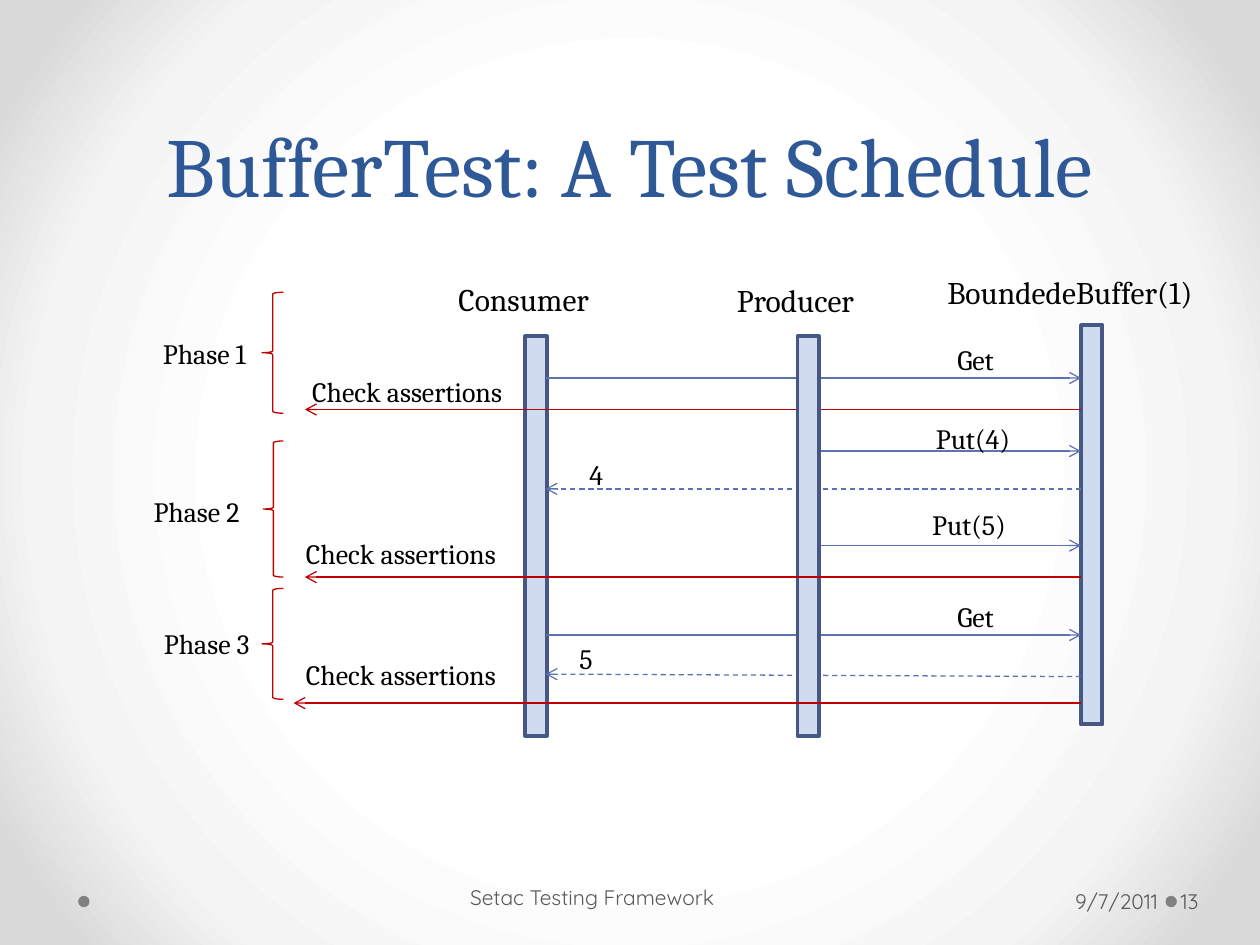
from dataclasses import dataclass

from lxml.etree import SubElement
from pptx import Presentation
from pptx.dml.color import RGBColor
from pptx.enum.dml import MSO_LINE_DASH_STYLE as Dash
from pptx.enum.shapes import MSO_CONNECTOR as Connector, MSO_SHAPE as Shape
from pptx.enum.text import MSO_ANCHOR as Anchor, MSO_AUTO_SIZE as AutoSize, PP_ALIGN as Align
from pptx.oxml.ns import qn
from pptx.util import Inches, Pt


@dataclass(frozen=True)
class Theme:
    """Colours, fonts and sizes of the slide."""
    title: str = "2F5897"
    text: str = "000000"
    footer: str = "595959"
    dot: str = "808080"
    bar_fill: str = "CFDCF0"
    bar_line: str = "475785"
    message: str = "5C72B2"
    check: str = "C00000"
    backdrop: tuple = ((50, "FFFFFF"), (76, "F4F4F4"), (92, "DADADA"))
    serif: str = "Cambria"
    sans: str = "Quicksand"
    title_size: int = 48
    title_spacing: int = 58
    name_size: int = 18
    label_size: int = 16
    footer_size: int = 12
    thin: float = 0.75
    thick: float = 2.25


THEME = Theme()
CONSUMER, PRODUCER, BUFFER = 4.17, 6.33, 8.58
BAR_WIDTH, BAR_HEIGHT = 0.17, 3.17
LABEL_HEIGHT = 0.37


def set_values(target, values):
    """Set each attribute of the target from a dict."""
    for name, value in values.items():
        setattr(target, name, value)


def paint_background(slide):
    """Fill the background with a centred radial gradient."""
    fill = slide.background.fill
    fill.gradient()
    gradient = slide.background._cSld.find(".//" + qn("a:gradFill"))
    for child in list(gradient):
        gradient.remove(child)
    stops = SubElement(gradient, qn("a:gsLst"))
    for position, color in THEME.backdrop:
        stop = SubElement(stops, qn("a:gs"), pos=str(position * 1000))
        SubElement(stop, qn("a:srgbClr"), val=color)
    circle = SubElement(gradient, qn("a:path"), path="circle")
    SubElement(circle, qn("a:fillToRect"), dict.fromkeys("ltrb", "50000"))


def add_text(slide, box, text, size, color=THEME.text, font=THEME.serif,
             paragraph_format=None, frame_format=None):
    """Add a one-paragraph text box."""
    frame = slide.shapes.add_textbox(*map(Inches, box)).text_frame
    set_values(frame, {"word_wrap": True, **(frame_format or {"auto_size": AutoSize.SHAPE_TO_FIT_TEXT})})
    paragraph = frame.paragraphs[0]
    paragraph.text = text
    set_values(paragraph, paragraph_format or {})
    set_values(paragraph.runs[0].font, {"name": font, "size": Pt(size)})
    paragraph.runs[0].font.color.rgb = RGBColor.from_string(color)


def add_label(slide, left, top, width, text, alignment=Align.LEFT):
    """Add a message or phase label."""
    add_text(slide, (left, top, width, LABEL_HEIGHT), text, THEME.label_size,
             paragraph_format={"alignment": alignment})


def add_footer(slide, box, text, alignment, margin_left, margin_right):
    """Add a footer text centred on its height."""
    add_text(slide, box, text, THEME.footer_size, THEME.footer, THEME.sans,
             {"alignment": alignment},
             {"vertical_anchor": Anchor.MIDDLE, "margin_left": Inches(margin_left),
              "margin_right": Inches(margin_right)})


def add_figure(slide, kind, box, fill=None, line=None, width=THEME.thin):
    """Add a preset shape with optional fill and outline."""
    shape = slide.shapes.add_shape(kind, *map(Inches, box))
    shape.shadow.inherit = False
    for part, color in ((shape.fill, fill), (shape.line.fill, line)):
        if color:
            part.solid()
            part.fore_color.rgb = RGBColor.from_string(color)
        else:
            part.background()
    if line:
        shape.line.width = Pt(width)


def add_lifeline(slide, left, top):
    """Add the vertical bar of one participant."""
    add_figure(slide, Shape.RECTANGLE, (left, top, BAR_WIDTH, BAR_HEIGHT),
               THEME.bar_fill, THEME.bar_line, THEME.thick)


def add_arrow(slide, start, end, color, dash=None):
    """Add a thin line with an open arrowhead at its end."""
    connector = slide.shapes.add_connector(Connector.STRAIGHT, *map(Inches, (*start, *end)))
    set_values(connector.line, {"width": Pt(THEME.thin), "dash_style": dash})
    connector.line.color.rgb = RGBColor.from_string(color)
    SubElement(connector.line._get_or_add_ln(), qn("a:tailEnd"), type="arrow")
    SubElement(connector._element.spPr, qn("a:effectLst"))


def add_check(slide, end, y, label_left, label_top):
    """Add a return arrow to the test with its label."""
    add_arrow(slide, (BUFFER, y), (end, y), THEME.check)
    add_label(slide, label_left, label_top, 2, "Check assertions")


def add_phase(slide, name, brace, left, top):
    """Add a phase brace and its name."""
    add_figure(slide, Shape.LEFT_BRACE, brace, line=THEME.check)
    add_label(slide, left, top, 1, name, Align.RIGHT)


def main():
    """Build the slide and save it."""
    presentation = Presentation()
    set_values(presentation, {"slide_width": Inches(10), "slide_height": Inches(7.5)})
    slide = presentation.slides.add_slide(presentation.slide_layouts[6])
    paint_background(slide)
    for left in (9.25, 0.62):
        add_figure(slide, Shape.OVAL, (left, 7.11, 0.09, 0.09), THEME.dot)
    add_text(slide, (0.5, 0, 9, 1.75), "BufferTest: A Test Schedule", THEME.title_size, THEME.title,
             paragraph_format={"alignment": Align.CENTER, "line_spacing": Pt(THEME.title_spacing)},
             frame_format={"vertical_anchor": Anchor.BOTTOM})

    add_lifeline(slide, CONSUMER, 2.67)
    add_lifeline(slide, BUFFER, 2.58)
    for left, top, width, name in ((7.42, 2.12, 2.33, "BoundedeBuffer(1)"),
                                   (5.75, 2.18, 1.42, "Producer"),
                                   (3.54, 2.17, 1.42, "Consumer")):
        add_text(slide, (left, top, width, 0.4), name, THEME.name_size)

    consumer_edge = 4.33
    for left, y in ((consumer_edge, 3), (6.42, 3.58), (PRODUCER, 4.33), (consumer_edge, 5.04)):
        add_arrow(slide, (left, y), (BUFFER, y), THEME.message)
    for start_y, end_y in ((3.88, 3.88), (5.37, 5.35)):
        add_arrow(slide, (BUFFER, start_y), (consumer_edge, end_y), THEME.message, Dash.DASH)
    add_check(slide, 2.42, 3.25, 2.38, 2.92)
    add_lifeline(slide, PRODUCER, 2.67)
    add_check(slide, 2.42, 4.58, 2.33, 4.21)
    add_check(slide, 2.33, 5.58, 2.33, 5.17)

    for label in ((7.5, 2.67, 0.92, "Get"), (7.33, 3.3, 1, "Put(4)"), (7.3, 3.98, 1, "Put(5)"),
                  (7.5, 4.71, 0.67, "Get"), (4.58, 3.58, 0.33, "4"), (4.5, 5.04, 0.25, "5")):
        add_label(slide, *label)

    add_phase(slide, "Phase 1", (2.08, 2.32, 0.17, 0.96), 1.05, 2.62)
    add_phase(slide, "Phase 2", (2.09, 3.5, 0.16, 1.08), 1, 3.88)
    add_phase(slide, "Phase 3", (2.08, 4.67, 0.17, 0.88), 1.08, 4.92)

    add_footer(slide, (6.96, 6.95, 2.28, 0.4), "9/7/2011", Align.RIGHT, 0.1, 0.05)
    add_footer(slide, (9.34, 6.95, 0.61, 0.4), "13", Align.LEFT, 0.03, 0.05)
    add_footer(slide, (3.17, 6.92, 3.11, 0.4), "Setac Testing Framework", Align.CENTER, 0.05, 0.1)
    presentation.save("out.pptx")


if __name__ == "__main__":
    main()
